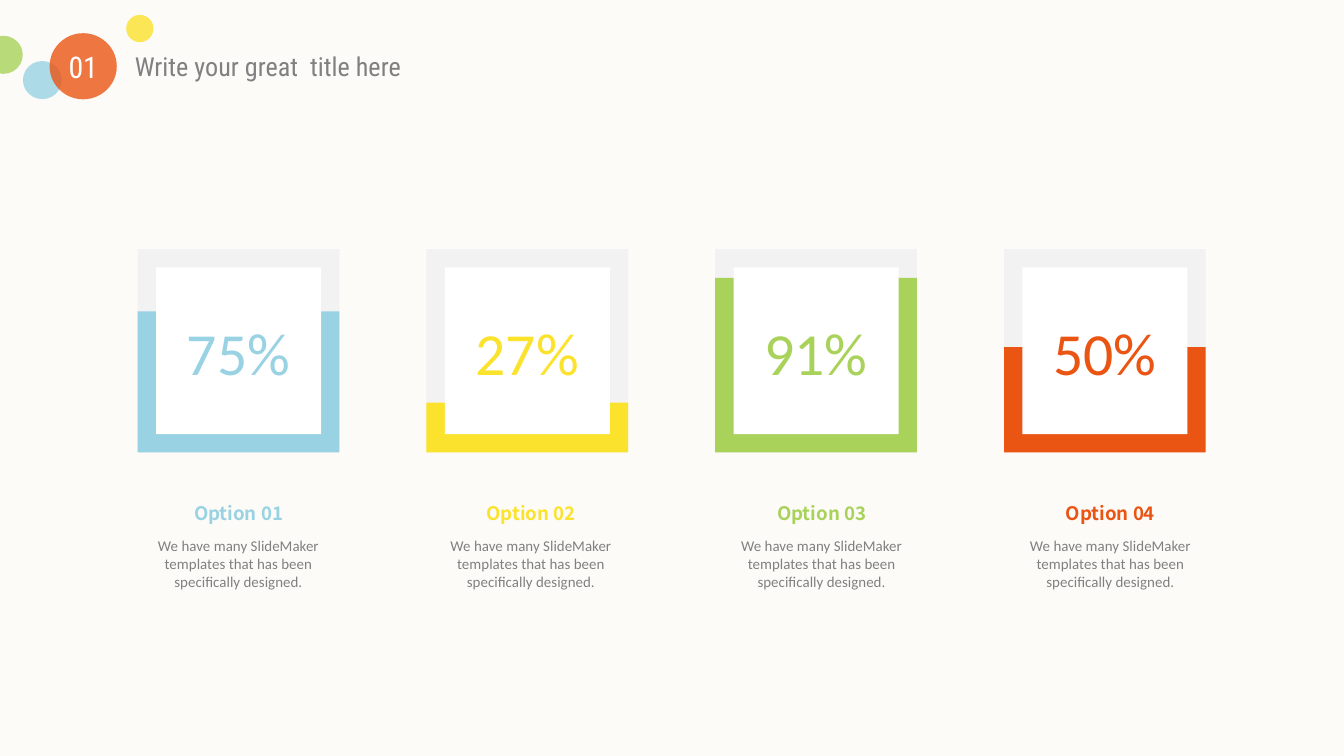
from lxml import etree
from pptx import Presentation
from pptx.dml.color import RGBColor
from pptx.enum import shapes, text
from pptx.oxml.ns import qn
from pptx.util import Pt

CREAM = RGBColor(0xFC, 0xFB, 0xF7)
WHITE = RGBColor(0xFF, 0xFF, 0xFF)
TRACK = RGBColor(0xF2, 0xF2, 0xF2)
GRAY = RGBColor(0x80, 0x80, 0x80)
BLUE = RGBColor(0x98, 0xD2, 0xE3)
YELLOW = RGBColor(0xFB, 0xE2, 0x2D)
GREEN = RGBColor(0xA9, 0xD2, 0x5A)
ORANGE = RGBColor(0xEA, 0x55, 0x14)

BODY_FONT = "Calibri"
LABEL_FONT = "Noto Sans CJK SC"
TITLE_FONT = "Roboto Condensed"
BLURB = "We have many SlideMaker templates that has been specifically designed."

CARD_LEFT, CARD_TOP, CARD_PITCH = 73.8, 133.4, 154.7
CARD_W, CARD_H = 108, 109

# percentage, label, colour, height of the coloured band, caption shift
OPTIONS = [
    ("75%", "Option 01", BLUE, 75.6, 0),
    ("27%", "Option 02", YELLOW, 26.7, 2),
    ("91%", "Option 03", GREEN, 93.5, 3),
    ("50%", "Option 04", ORANGE, 56.4, 3),
]

# left, top, width, height, colour
BUBBLES = [
    (67.6, 8, 14.6, 14.6, YELLOW),
    (-8.6, 19.2, 20.8, 20.4, GREEN),
    (12.3, 32.7, 20.8, 20.4, BLUE),
    (26.6, 17.8, 36, 35.4, ORANGE),
]


def add_block(slide, kind, x, y, w, h, color, opacity=None):
    """Add a borderless filled shape, with opacity in percent."""
    sp = slide.shapes.add_shape(kind, Pt(x), Pt(y), Pt(w), Pt(h))
    sp.shadow.inherit = False
    sp.fill.solid()
    sp.fill.fore_color.rgb = color
    sp.line.fill.background()
    if opacity is not None:
        clr = sp.fill._xPr.find(qn("a:solidFill"))[0]
        etree.SubElement(clr, qn("a:alpha"), val=str(opacity * 1000))


def write(sp, words, size, font, color, align=text.PP_ALIGN.CENTER, bold=False):
    tf = sp.text_frame
    tf.margin_left = tf.margin_right = tf.margin_top = tf.margin_bottom = 0
    tf.word_wrap = True
    tf.auto_size = text.MSO_AUTO_SIZE.SHAPE_TO_FIT_TEXT
    tf.vertical_anchor = text.MSO_ANCHOR.TOP
    p = tf.paragraphs[0]
    p.text = words
    p.alignment = align
    p.font.size = Pt(size)
    p.font.name = font
    p.font.bold = bold
    p.font.color.rgb = color


def add_label(slide, x, y, w, h, *args, **style):
    sp = slide.shapes.add_textbox(Pt(x), Pt(y), Pt(w), Pt(h))
    write(sp, *args, **style)


def add_header(slide, x, y):
    for dx, dy, w, h, color in BUBBLES:
        add_block(slide, shapes.MSO_SHAPE.OVAL, x + dx, y + dy, w, h, color, 80)
    add_label(slide, x + 31.7, y + 26, 25.9, 19.4, "01", 16, TITLE_FONT, WHITE)
    title = slide.shapes.title
    title.left, title.top = Pt(x + 72.2), Pt(y + 26.8)
    title.width, title.height = Pt(219), Pt(17)
    write(title, "Write your great  title here", 14, TITLE_FONT, GRAY,
          align=text.PP_ALIGN.LEFT)


def add_option(slide, x, y, w, h, percent, label, color, band, shift):
    """Add a square gauge with its percentage inside and a caption below."""
    rect = shapes.MSO_SHAPE.RECTANGLE
    inset = 9.8
    add_block(slide, rect, x, y, w, h, TRACK)
    add_block(slide, rect, x, y + h - band, w, band, color)
    add_block(slide, rect, x + inset, y + inset, w - 2 * inset, h - 2 * inset, WHITE)
    add_label(slide, x, y + 36, w, 38.8, percent, 32, BODY_FONT, color)
    x += shift
    add_label(slide, x, y + 135.2, w, 12, label, 10, LABEL_FONT, color, bold=True)
    add_label(slide, x - 2.5, y + 154, w + 5, 29, BLURB, 8, BODY_FONT, GRAY)


def main():
    prs = Presentation()
    prs.slide_width, prs.slide_height = Pt(720), Pt(405)
    slide = prs.slides.add_slide(prs.slide_layouts[5])
    slide.background.fill.solid()
    slide.background.fill.fore_color.rgb = CREAM
    for i, option in enumerate(OPTIONS):
        add_option(slide, CARD_LEFT + i * CARD_PITCH, CARD_TOP, CARD_W, CARD_H, *option)
    add_header(slide, 0, 0)
    prs.save("out.pptx")


if __name__ == "__main__":
    main()
